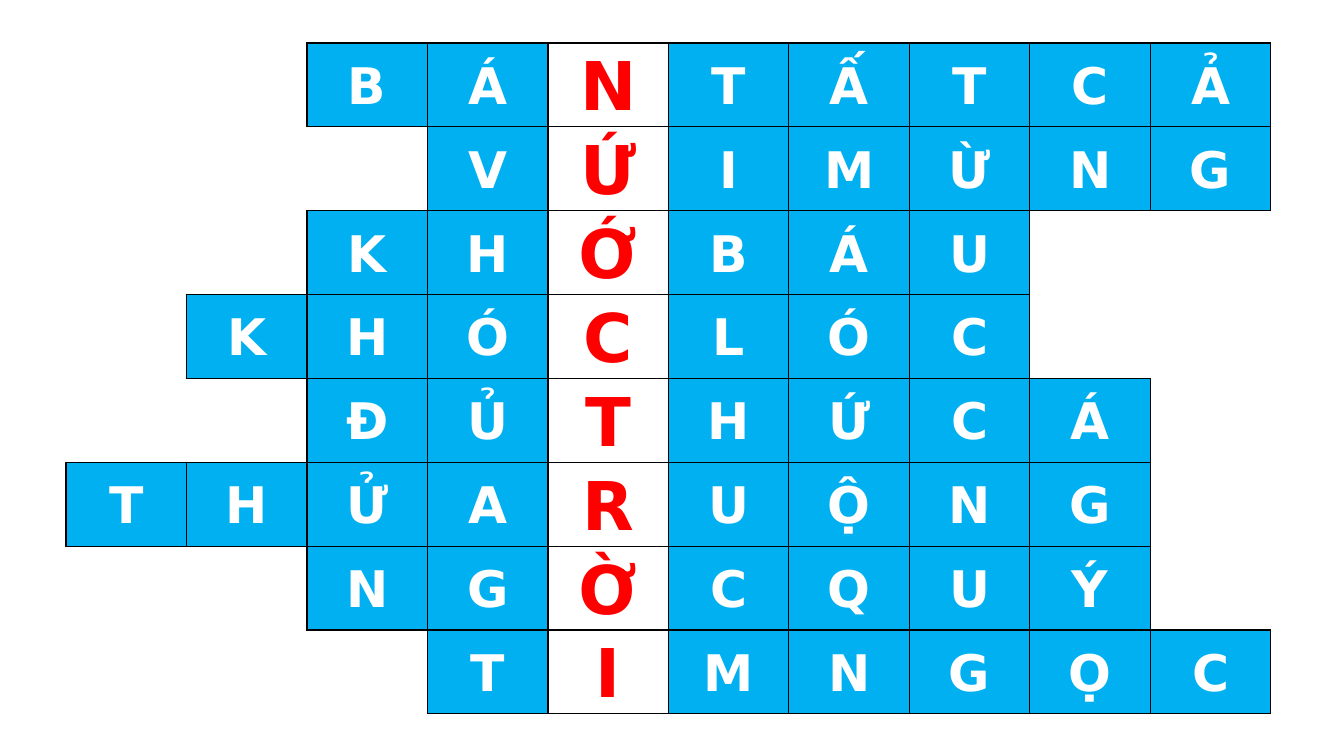
from pptx import Presentation
from pptx import util as u
from pptx.dml.color import RGBColor
from pptx.enum import text
from pptx.oxml import parse_xml
from pptx.oxml.ns import nsdecls

WHITE = RGBColor(0xFF, 0xFF, 0xFF)
BLACK = RGBColor(0x00, 0x00, 0x00)
BLUE = RGBColor(0x00, 0xB0, 0xF0)
RED = RGBColor(0xFF, 0x00, 0x00)

COLUMNS = 10
KEY_COLUMN = 4
# Start column and letters of each answer
ANSWERS = [
    (2, "BÁNTẤTCẢ"),
    (3, "VỨIMỪNG"),
    (2, "KHỚBÁU"),
    (1, "KHÓCLÓC"),
    (2, "ĐỦTHỨCÁ"),
    (0, "THỬARUỘNG"),
    (2, "NGỜCQUÝ"),
    (3, "TIMNGỌC"),
]
# Border tag and the neighbour (row, column step) that shares the edge
EDGES = [("lnL", 0, -1), ("lnR", 0, 1), ("lnT", -1, 0), ("lnB", 1, 0)]


def px(count):
    return u.Emu(round(count * u.Inches(1) / 100.8))


def letter_at(row, column):
    if not 0 <= row < len(ANSWERS):
        return ""
    start, letters = ANSWERS[row]
    return letters[column - start] if 0 <= column - start < len(letters) else ""


def write(cell, words, size, color, font="DejaVu Sans", bold=True):
    cell.vertical_anchor = text.MSO_ANCHOR.MIDDLE
    cell.margin_left = cell.margin_right = px(7)
    cell.margin_top = cell.margin_bottom = 0
    para = cell.text_frame.paragraphs[0]
    para.alignment = text.PP_ALIGN.CENTER
    para.line_spacing = 1.07
    span = para.add_run()
    span.text = words
    span.font.name = font
    span.font.size = u.Pt(size)
    span.font.bold = bold
    span.font.color.rgb = color


def set_borders(cell, row, column):
    """Rule every edge that touches a letter; leave the others open."""
    properties = cell._tc.get_or_add_tcPr()
    for index, (tag, down, right) in enumerate(EDGES):
        ruled = letter_at(row, column) or letter_at(row + down, column + right)
        paint = (f'<a:solidFill><a:srgbClr val="{BLACK}"/></a:solidFill>'
                 if ruled else "<a:noFill/>")
        line = f'<a:{tag} {nsdecls("a")} w="{u.Pt(1)}">{paint}</a:{tag}>'
        properties.insert(index, parse_xml(line))


def fill_cell(cell, row, column):
    letter = letter_at(row, column)
    if not letter:
        cell.fill.background()
    else:
        is_key = column == KEY_COLUMN
        cell.fill.solid()
        cell.fill.fore_color.rgb = WHITE if is_key else BLUE
        write(cell, letter, size=48 if is_key else 36,
              color=RED if is_key else WHITE)
    set_borders(cell, row, column)


def add_crossword(page, left, top, width, height):
    table = page.shapes.add_table(len(ANSWERS), COLUMNS, px(left), px(top),
                                  px(width), px(height)).table
    table.first_row = table.horz_banding = False
    for row in range(len(ANSWERS)):
        for column in range(COLUMNS):
            fill_cell(table.cell(row, column), row, column)


def main():
    deck = Presentation()
    deck.slide_width, deck.slide_height = px(1344), px(756)
    page = deck.slides.add_slide(deck.slide_layouts[6])
    add_crossword(page, left=66, top=43, width=1205, height=671)
    deck.save("out.pptx")


if __name__ == "__main__":
    main()
